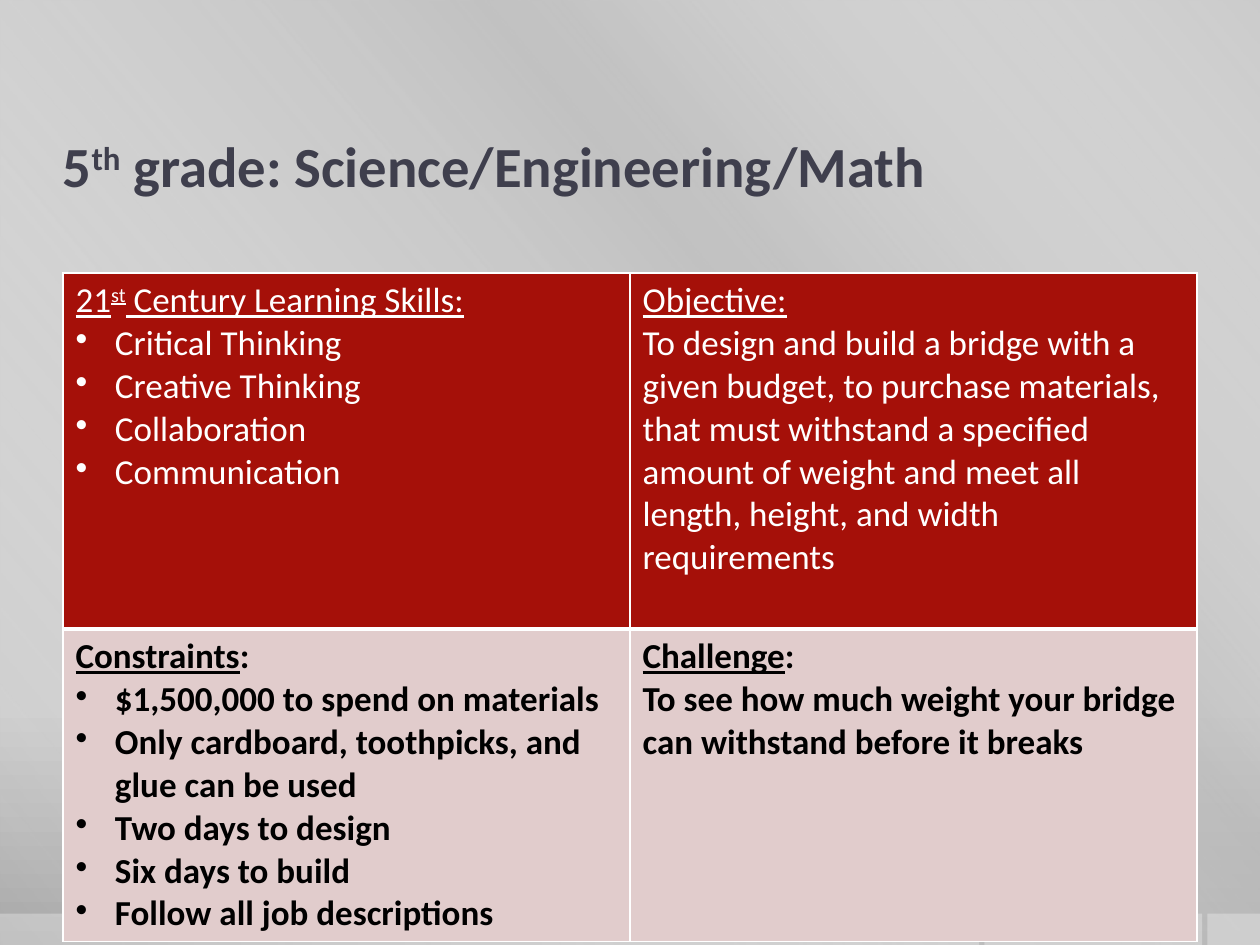
from dataclasses import dataclass

from lxml.etree import SubElement
from pptx import Presentation
from pptx.dml.color import RGBColor
from pptx.enum.shapes import MSO_SHAPE
from pptx.enum.text import MSO_ANCHOR
from pptx.oxml.ns import qn
from pptx.util import Pt


@dataclass(frozen=True)
class Theme:
    font: str = "Calibri"
    title_size: float = 32.4
    body_size: float = 20
    title: str = "3F3F4D"
    white: str = "FFFFFF"
    black: str = "000000"
    header: str = "A51009"
    body: str = "E1CCCC"
    backdrop: tuple = ((0, "CBCBCB", 100), (76, "C8C8C8", 100), (100, "A7A7A7", 100))
    sheen: tuple = ((0, "FFFFFF", 0), (34, "BFBFBF", 61), (38, "BFBFBF", 76), (100, "FFFFFF", 0))


THEME = Theme()
UNDERLINE = "underline"
SUPERSCRIPT = "superscript"

SKILLS = ([("21", UNDERLINE), ("st", UNDERLINE, SUPERSCRIPT), (" Century Learning Skills:", UNDERLINE)],
          ["Critical Thinking", "Creative Thinking", "Collaboration", "Communication"], True)
OBJECTIVE = ([("Objective:", UNDERLINE)],
             ["To design and build a bridge with a given budget, to purchase materials, that must "
              "withstand a specified amount of weight and meet all length, height, and width "
              "requirements"], False)
CONSTRAINTS = ([("Constraints", UNDERLINE), (":",)],
               ["$1,500,000 to spend on materials", "Only cardboard, toothpicks, and glue can be used",
                "Two days to design", "Six days to build", "Follow all job descriptions"], True)
CHALLENGE = ([("Challenge", UNDERLINE), (":",)],
             ["To see how much weight your bridge can withstand before it breaks"], False)


def add_color(parent, color, opacity=100):
    element = SubElement(parent, qn("a:srgbClr"), val=color)
    if opacity < 100:
        SubElement(element, qn("a:alpha"), val=str(opacity * 1000))


def set_gradient(fill, owner, stops, angle):
    fill.gradient()
    fill.gradient_angle = 360 - angle
    stop_list = next(owner.element.iter(qn("a:gsLst")))
    for stop in list(stop_list):
        stop_list.remove(stop)
    for position, color, opacity in stops:
        stop = SubElement(stop_list, qn("a:gs"), pos=str(position * 1000))
        add_color(stop, color, opacity)


def add_rectangle(slide, left, top, width, height):
    shape = slide.shapes.add_shape(MSO_SHAPE.RECTANGLE, Pt(left), Pt(top), Pt(width), Pt(height))
    shape.shadow.inherit = False
    shape.line.fill.background()
    return shape


def add_footer_bar(slide, left, width):
    bar = add_rectangle(slide, left, 522, width, 18)
    bar.fill.solid()
    bar.fill.fore_color.rgb = RGBColor.from_string(THEME.white)
    color = next(bar.element.spPr.iter(qn("a:srgbClr")))
    SubElement(color, qn("a:alpha"), val="30000")


def write_paragraph(paragraph, runs, size, color, bold):
    for text, *styles in runs:
        run = paragraph.add_run()
        run.text = text
        if UNDERLINE in styles:
            run.font.underline = True
        if SUPERSCRIPT in styles:
            run._r.get_or_add_rPr().set("baseline", "30000")
    font = paragraph.font
    font.name = THEME.font
    font.size = Pt(size)
    font.bold = bold
    font.color.rgb = RGBColor.from_string(color)


def add_bullet(paragraph):
    properties = paragraph._p.get_or_add_pPr()
    properties.set("marL", str(Pt(22.5)))
    properties.set("indent", str(-Pt(22.5)))
    SubElement(properties, qn("a:buChar"), char="•")


def add_title(slide):
    box = slide.shapes.add_textbox(Pt(36), Pt(58), Pt(648), Pt(72))
    frame = box.text_frame
    frame.word_wrap = True
    frame.vertical_anchor = MSO_ANCHOR.MIDDLE
    frame.margin_left = frame.margin_right = 0
    runs = [("5",), ("th", SUPERSCRIPT), (" grade: Science/Engineering/Math",)]
    write_paragraph(frame.paragraphs[0], runs, THEME.title_size, THEME.title, True)


def set_borders(cell, top, bottom):
    properties = cell._tc.get_or_add_tcPr()
    for side, width in (("L", 1), ("R", 1), ("T", top), ("B", bottom)):
        line = SubElement(properties, qn(f"a:ln{side}"), w=str(Pt(width)))
        add_color(SubElement(line, qn("a:solidFill")), THEME.white)


def fill_cell(cell, content, background, color, bold):
    heading, lines, bulleted = content
    cell.fill.solid()
    cell.fill.fore_color.rgb = RGBColor.from_string(background)
    frame = cell.text_frame
    write_paragraph(frame.paragraphs[0], heading, THEME.body_size, color, bold)
    for line in lines:
        paragraph = frame.add_paragraph()
        if bulleted:
            add_bullet(paragraph)
        write_paragraph(paragraph, [(line,)], THEME.body_size, color, bold)


def add_project_table(slide):
    table = slide.shapes.add_table(2, 2, Pt(36), Pt(156), Pt(648), Pt(382)).table
    table.first_row = table.horz_banding = False
    rows = (
        (203.5, (SKILLS, OBJECTIVE), (1, 3), (THEME.header, THEME.white, False)),
        (178.5, (CONSTRAINTS, CHALLENGE), (3, 1), (THEME.body, THEME.black, True)),
    )
    for row, (height, contents, borders, style) in zip(table.rows, rows):
        row.height = Pt(height)
        for cell, content in zip(row.cells, contents):
            set_borders(cell, *borders)
            fill_cell(cell, content, *style)


def main():
    presentation = Presentation()
    presentation.slide_width, presentation.slide_height = Pt(720), Pt(540)
    slide = presentation.slides.add_slide(presentation.slide_layouts[6])
    set_gradient(slide.background.fill, slide, THEME.backdrop, 90)
    sheen = add_rectangle(slide, 0, 0, 720, 540)
    set_gradient(sheen.fill, sheen, THEME.sheen, 140)
    for left, width in ((690, 30), (562.5, 124.5), (0, 559.5)):
        add_footer_bar(slide, left, width)
    add_title(slide)
    add_project_table(slide)
    presentation.save("out.pptx")


if __name__ == "__main__":
    main()
